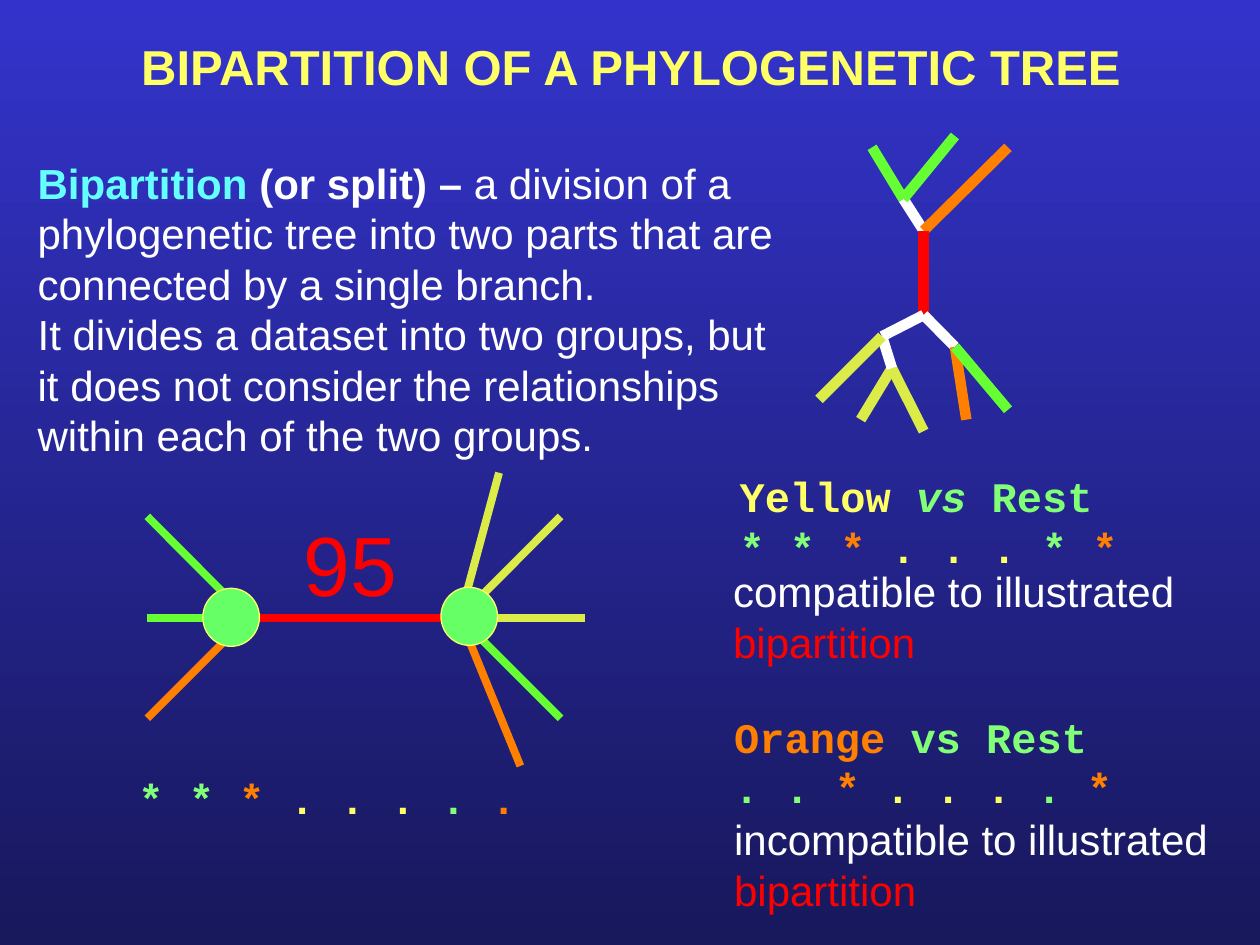
"""Build the slide that explains the bipartition of a phylogenetic tree."""
import pptx
import pptx.dml.color
import pptx.enum.shapes
import pptx.enum.text
import pptx.oxml
import pptx.oxml.ns
import pptx.util

Cm, Pt = pptx.util.Cm, pptx.util.Pt

THEME = {
    "top": "3333CC", "bottom": "18185C", "white": "FFFFFF", "red": "FF0000",
    "orange": "FF8000", "green": "66FF33", "lime": "DBEB47", "yellow": "FFFF66",
    "cyan": "66FFFF", "node": "66FF66", "mint": "81FF76",
    "sans": "Arial", "mono": "Courier New",
    "title": 28, "body": 24, "support": 48,
    "star_line": 4.5, "tree_line": 6, "node_line": 0.75,
}

TAXA = ("mint", "orange", "yellow", "mint", "orange")


def pattern(*groups):
    """Pair each group of symbols with the colour of its taxa."""
    return [(text, colour, "b") for text, colour in zip(groups, TAXA)]


# text box: left, top, width, height, wrap, font, size, paragraphs of (text, colour, style)
TITLE = (2.51, 0.61, 20.42, 1.45, False, "sans", "title",
         [[("BIPARTITION OF A PHYLOGENETIC TREE", "yellow", "b")]])
TEXTS = [
    (0.51, 3.05, 15.8, 6.35, True, "sans", "body", [
        [("Bipartition", "cyan", "b"), (" (or split) – ", "white", "b"),
         ("a division of a phylogenetic tree into two parts that are "
          "connected by a single branch.", "white", "")],
        [("It divides a dataset into two groups, but it does not consider "
          "the relationships within each of the two groups.", "white", "")]]),
    (5.87, 10.21, 2.41, 2.31, False, "sans", "support", [[("95", "red", "")]]),
    (14.53, 11.28, 9.7, 2.29, False, "sans", "body",
     [[("compatible to illustrated \n", "white", ""), ("bipartition", "red", "")]]),
    (14.55, 16.28, 10.39, 2.29, False, "sans", "body",
     [[("incompatible to illustrated \n", "white", ""), ("bipartition", "red", "")]]),
    (2.54, 15.44, 9.32, 1.3, True, "mono", "body",
     [pattern("* * ", "* ", ". . . ", ". ", ".")]),
    (14.55, 14.22, 9.32, 2.29, True, "mono", "body",
     [[("Orange", "orange", "b"), (" vs Rest\n", "mint", "b")]
      + pattern(". . ", "* ", ". . . ", ". ", "*")]),
    (14.66, 9.37, 9.32, 2.29, True, "mono", "body",
     [[("Yellow ", "yellow", "b"), ("vs", "mint", "bi"), (" Rest \n", "mint", "b")]
      + pattern("* * ", "* ", ". . . ", "* ", "*")]),
]

LEFT_HUB, RIGHT_HUB = (5, 12.45), (9.27, 12.45)
STAR = [
    (LEFT_HUB, RIGHT_HUB, "red"),
    (RIGHT_HUB, (11.3, 10.41), "lime"),
    (RIGHT_HUB, (11.3, 14.48), "green"),
    (LEFT_HUB, (2.97, 14.48), "orange"),
    (LEFT_HUB, (2.97, 10.41), "green"),
    (RIGHT_HUB, (10.06, 9.53), "lime"),
    (RIGHT_HUB, (10.49, 15.44), "orange"),
    (RIGHT_HUB, (11.79, 12.45), "lime"),
    (LEFT_HUB, (2.97, 12.45), "green"),
]
NODES = [(8.89, 11.84), (4.09, 11.86)]
NODE_SIZE = (1.14, 1.17)

UPPER, LOWER = (18.62, 4.65), (18.62, 6.35)
UPPER_PAIR, LEFT_FORK = (18.21, 4.01), (17.78, 6.78)
LEFT_PAIR, RIGHT_PAIR = (17.98, 7.42), (19.25, 6.99)
TREE = [
    (UPPER_PAIR, UPPER, "white"),
    (UPPER_PAIR, (19.25, 2.74), "green"),
    (UPPER, (20.32, 2.97), "orange"),
    (UPPER, LOWER, "red"),
    (LEFT_FORK, LOWER, "white"),
    (LEFT_PAIR, (17.35, 8.46), "lime"),
    (LEFT_PAIR, (18.62, 8.69), "lime"),
    (LOWER, RIGHT_PAIR, "white"),
    (RIGHT_PAIR, (19.48, 8.46), "orange"),
    (UPPER_PAIR, (17.58, 2.97), "green"),
    (LEFT_FORK, LEFT_PAIR, "white"),
    (LEFT_FORK, (16.51, 8.05), "lime"),
    (RIGHT_PAIR, (20.32, 8.26), "green"),
]


def rgb(name):
    """Return a theme colour."""
    return pptx.dml.color.RGBColor.from_string(THEME[name])


def add_text(s, left, top, width, height, wrap, font, size, paragraphs):
    """Add a text box of coloured runs and return its text frame."""
    tf = s.shapes.add_textbox(Cm(left), Cm(top), Cm(width), Cm(height)).text_frame
    tf.word_wrap = wrap
    for i, runs in enumerate(paragraphs):
        p = tf.add_paragraph() if i else tf.paragraphs[0]
        for text, colour, style in runs:
            r = p.add_run()
            r.text = text.rstrip("\n")
            r.font.name, r.font.size = THEME[font], Pt(THEME[size])
            r.font.color.rgb = rgb(colour)
            r.font.bold, r.font.italic = "b" in style, "i" in style
            if text.endswith("\n"):
                p.add_line_break()
    return tf


def add_branches(s, branches, width):
    """Draw straight branches of one width."""
    for start, end, colour in branches:
        line = s.shapes.add_connector(
            pptx.enum.shapes.MSO_CONNECTOR.STRAIGHT, *map(Cm, start + end))
        line.line.color.rgb = rgb(colour)
        line.line.width = Pt(THEME[width])
        line._element.spPr.append(pptx.oxml.parse_xml(
            "<a:effectLst %s/>" % pptx.oxml.ns.nsdecls("a")))


def add_node(s, left, top):
    """Draw a round node of the collapsed tree."""
    sp = s.shapes.add_shape(pptx.enum.shapes.MSO_SHAPE.OVAL,
                            *map(Cm, (left, top) + NODE_SIZE))
    sp.shadow.inherit = False
    sp.fill.solid()
    sp.fill.fore_color.rgb = rgb("node")
    sp.line.color.rgb = rgb("yellow")
    sp.line.width = Pt(THEME["node_line"])


def main():
    """Compose and save the slide."""
    prs = pptx.Presentation()
    prs.slide_width, prs.slide_height = Cm(25.4), Cm(19.05)
    s = prs.slides.add_slide(prs.slide_layouts[6])
    fill = s.background.fill
    fill.gradient()
    fill.gradient_angle = 270
    for stop, colour in zip(fill.gradient_stops, ("top", "bottom")):
        stop.color.rgb = rgb(colour)
    title = add_text(s, *TITLE)
    title.paragraphs[0].alignment = pptx.enum.text.PP_ALIGN.CENTER
    add_branches(s, STAR, "star_line")
    for node in NODES:
        add_node(s, *node)
    for text in TEXTS:
        add_text(s, *text)
    add_branches(s, TREE, "tree_line")
    prs.save("out.pptx")


if __name__ == "__main__":
    main()
